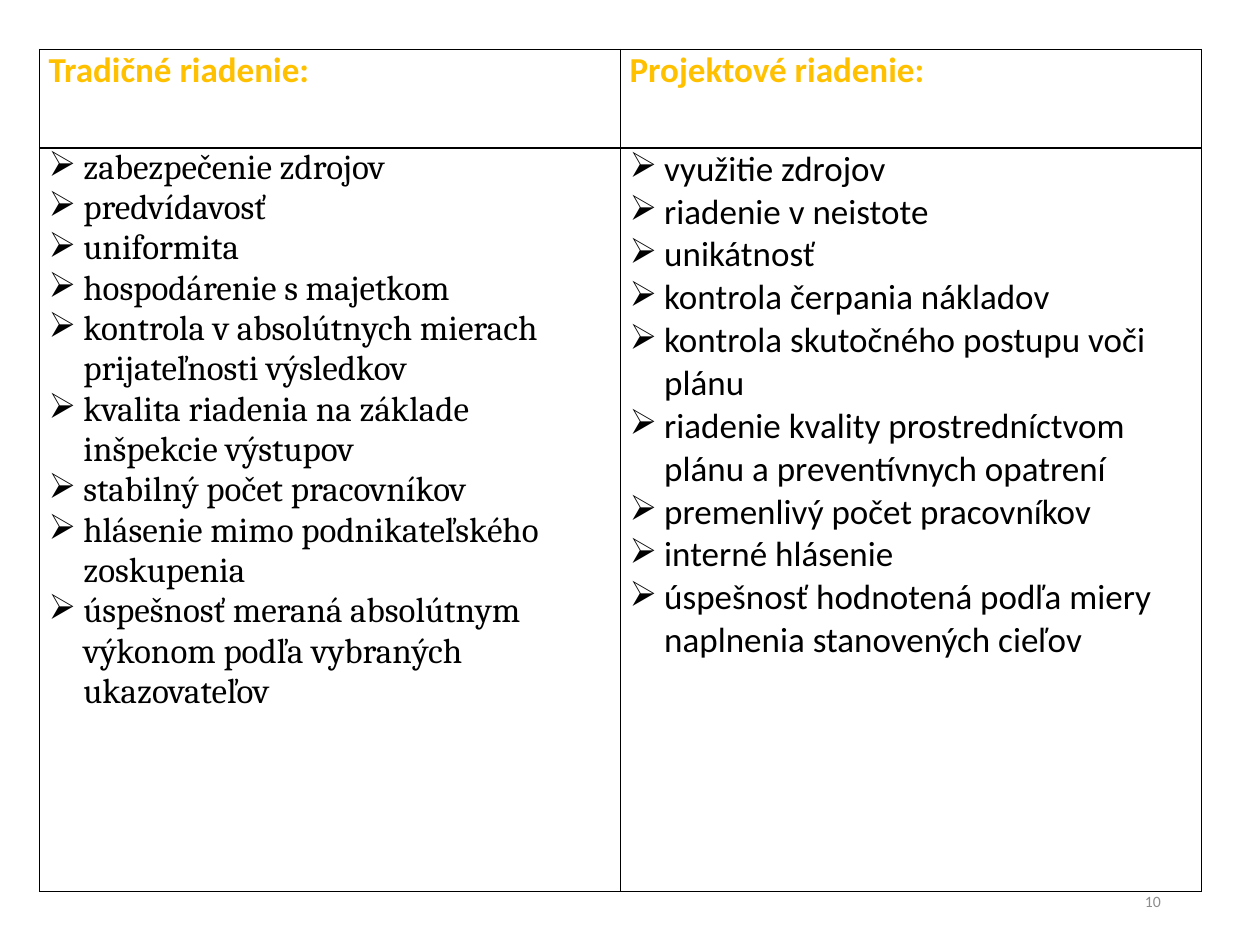
from lxml import etree
from pptx import Presentation
from pptx.dml.color import RGBColor
from pptx.enum.text import MSO_ANCHOR, PP_ALIGN
from pptx.oxml.ns import qn
from pptx.util import Cm, Pt

LEFT, RIGHT = PP_ALIGN.LEFT, PP_ALIGN.RIGHT
MIDDLE = MSO_ANCHOR.MIDDLE

# Heading, body font, items; "\n" marks a line break within an item
COMPARISON = [
    ("Tradičné riadenie:", "Cambria", [
        "zabezpečenie zdrojov",
        "predvídavosť",
        "uniformita",
        "hospodárenie s majetkom",
        "kontrola v absolútnych mierach\nprijateľnosti výsledkov",
        "kvalita riadenia na základe\ninšpekcie výstupov",
        "stabilný počet pracovníkov",
        "hlásenie mimo podnikateľského\nzoskupenia",
        "úspešnosť meraná absolútnym\nvýkonom podľa vybraných\nukazovateľov",
    ]),
    ("Projektové riadenie:", "Calibri", [
        "využitie zdrojov",
        "riadenie v neistote",
        "unikátnosť",
        "kontrola čerpania nákladov",
        "kontrola skutočného postupu voči\nplánu",
        "riadenie kvality prostredníctvom\nplánu a preventívnych opatrení",
        "premenlivý počet pracovníkov",
        "interné hlásenie",
        "úspešnosť hodnotená podľa miery\nnaplnenia stanovených cieľov",
    ]),
]


def rgb(hex_color):
    return RGBColor.from_string(hex_color)


def write(paragraph, text, size=20, font="Calibri", color="000000",
          bold=False, align=LEFT, bullet=None):
    """Fill one paragraph with formatted text, optionally bulleted."""
    paragraph.alignment = align
    if bullet:
        properties = paragraph._p.get_or_add_pPr()
        properties.set("marL", str(Cm(0.7)))
        properties.set("indent", str(-Cm(0.7)))
        etree.SubElement(properties, qn("a:buChar")).set("char", bullet)
    for number, line in enumerate(text.split("\n")):
        if number:
            paragraph.add_line_break()
        run = paragraph.add_run()
        run.text = line
        run.font.size = Pt(size)
        run.font.name = font
        run.font.bold = bold
        run.font.color.rgb = rgb(color)


def style_cell(cell, border="000000"):
    """Give a cell narrow margins, no fill and a thin border all round."""
    cell.margin_left = cell.margin_right = Cm(0.18)
    cell.margin_top = cell.margin_bottom = 0
    properties = cell._tc.get_or_add_tcPr()
    for side in ("a:lnL", "a:lnR", "a:lnT", "a:lnB"):
        line = etree.SubElement(properties, qn(side), w=str(Pt(1)))
        fill = etree.SubElement(line, qn("a:solidFill"))
        etree.SubElement(fill, qn("a:srgbClr"), val=border)
    cell.fill.background()


def add_comparison(slide, left, top, width, height, header_height):
    """Two-column table: a heading row above a row of bulleted lists."""
    table = slide.shapes.add_table(
        2, len(COMPARISON), left, top, width, height).table
    table.rows[0].height = header_height
    table.rows[1].height = height - header_height
    for column, (heading, font, items) in enumerate(COMPARISON):
        table.columns[column].width = width // len(COMPARISON)
        heading_cell, list_cell = table.cell(0, column), table.cell(1, column)
        style_cell(heading_cell)
        style_cell(list_cell)
        write(heading_cell.text_frame.paragraphs[0], heading,
              color="FFC000", bold=True)
        frame = list_cell.text_frame
        for number, item in enumerate(items):
            paragraph = frame.add_paragraph() if number else frame.paragraphs[0]
            write(paragraph, item, font=font, bullet="➢")


def add_page_number(slide, left, top, width, height):
    """Small grey page number, right-aligned in its box."""
    frame = slide.shapes.add_textbox(left, top, width, height).text_frame
    frame.word_wrap = True
    frame.vertical_anchor = MIDDLE
    write(frame.paragraphs[0], "10", size=9, color="8C8C8C", align=RIGHT)


def main():
    presentation = Presentation()
    presentation.slide_width, presentation.slide_height = Cm(25.4), Cm(19.05)
    slide = presentation.slides.add_slide(presentation.slide_layouts[6])
    add_comparison(slide, Cm(0.8), Cm(1), Cm(23.42), Cm(16.97), Cm(1.98))
    add_page_number(slide, Cm(17.93), Cm(17.65), Cm(5.72), Cm(1.02))
    presentation.save("out.pptx")


if __name__ == "__main__":
    main()
